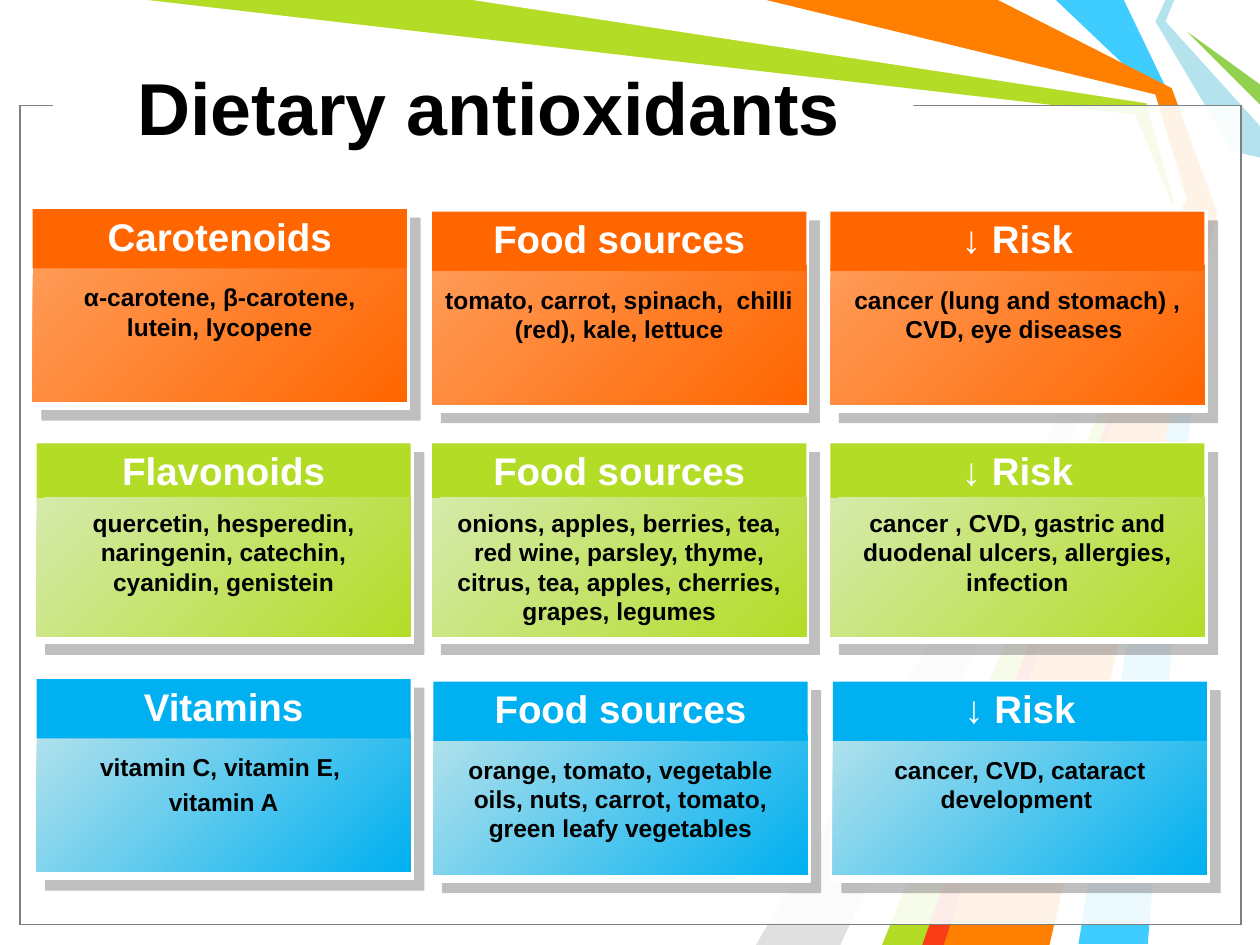
from dataclasses import dataclass

from lxml import etree
from pptx import Presentation
from pptx.dml.color import RGBColor
from pptx.enum.shapes import MSO_SHAPE
from pptx.enum.text import MSO_ANCHOR, PP_ALIGN
from pptx.oxml.ns import qn
from pptx.shapes.autoshape import Shape
from pptx.slide import Slide
from pptx.util import Inches, Pt

RECTANGLE = MSO_SHAPE.RECTANGLE
MIDDLE, TOP = MSO_ANCHOR.MIDDLE, MSO_ANCHOR.TOP
CENTER, LEFT = PP_ALIGN.CENTER, PP_ALIGN.LEFT
FONT = "Arial"
CARD_WIDTH, CARD_HEIGHT = 3, 1.6
PANEL_WIDTH, HEADER_HEIGHT, BODY_HEIGHT = 2.97, 0.47, 1.1

COLORS = {
    "white": "FFFFFF", "black": "000000", "gray": "808080", "silver": "E0E0E0",
    "sky": "3FCDFF", "lime": "B3DC27", "pale_lime": "D5EAAB",
    "ice": "B4E3EE", "leaf": "92D050", "amber": "FF7F00", "red": "F93D17",
    "orange": "FF6600", "pale_orange": "FF9B57",
    "blue": "00B0F0", "pale_blue": "B1E1EC",
}


@dataclass
class Ray:
    color: str
    points: list[tuple[float, float]]


@dataclass
class Card:
    left: float
    top: float
    heading: str
    details: str


@dataclass
class CardRow:
    color: str
    pale: str
    details_offset: float
    header_in_front: bool
    cards: list[Card]


RAYS = [
    Ray("sky", [(8.92, 0), (9.29, 0.77), (9.58, 1.67), (9.11, 7.49), (8.56, 7.49),
                (9.5, 1.67), (9.17, 0.75), (8.38, 0)]),
    Ray("lime", [(1.17, 0), (3.83, 0), (9.14, 0.78), (9.42, 1.69), (7.42, 7.5),
                 (6.92, 7.5), (9.35, 1.73), (9.01, 0.91)]),
    Ray("silver", [(6.67, 7.5), (9.27, 1.81), (6, 7.5)]),
    Ray("white", [(3.75, 0), (9.1, 0.82), (9.32, 1.62), (6.75, 7.5), (7, 7.5),
                  (9.41, 1.58), (9.17, 0.75), (6, 0)]),
    Ray("ice", [(9.25, 0), (9.17, 0.17), (9.78, 1.2), (10, 1.25), (10, 1),
                (9.25, 0.17), (9.32, 0)]),
    Ray("leaf", [(10, 0.83), (9.42, 0.25), (10, 0.67)]),
    Ray("amber", [(6.08, 0), (7.92, 0), (9.3, 0.7), (9.66, 1.69), (8.33, 7.5),
                  (7.33, 7.5), (9.42, 1.58), (9.17, 0.75)]),
    Ray("red", [(7.32, 7.5), (9.32, 1.83), (7.49, 7.5)]),
]

CARD_ROWS = [
    CardRow("orange", "pale_orange", 0.54, True, [
        Card(0.25, 1.65, "Carotenoids", "α-carotene, β-carotene, lutein, lycopene"),
        Card(3.42, 1.67, "Food sources",
             "tomato, carrot, spinach,  chilli (red), kale, lettuce"),
        Card(6.58, 1.67, "↓ Risk", "cancer (lung and stomach) , CVD, eye diseases "),
    ]),
    CardRow("lime", "pale_lime", 0.47, False, [
        Card(0.28, 3.51, "Flavonoids",
             "quercetin, hesperedin, naringenin, catechin, cyanidin, genistein"),
        Card(3.42, 3.51, "Food sources",
             "onions, apples, berries, tea, red wine, parsley, thyme, "
             "citrus, tea, apples, cherries, grapes, legumes"),
        Card(6.58, 3.51, "↓ Risk",
             "cancer , CVD, gastric and duodenal ulcers, allergies, infection"),
    ]),
    CardRow("blue", "pale_blue", 0.54, True, [
        Card(0.28, 5.38, "Vitamins", "vitamin C, vitamin E, \nvitamin A"),
        Card(3.43, 5.4, "Food sources",
             "orange, tomato, vegetable oils, nuts, carrot, tomato, "
             "green leafy vegetables"),
        Card(6.6, 5.4, "↓ Risk", "cancer, CVD, cataract development "),
    ]),
]


def rgb(color: str) -> RGBColor:
    return RGBColor.from_string(COLORS[color])


def add_box(slide: Slide, left: float, top: float, width: float, height: float,
            color: str, line: str | None = None) -> Shape:
    box = slide.shapes.add_shape(
        RECTANGLE, Inches(left), Inches(top), Inches(width), Inches(height))
    box.shadow.inherit = False
    box.fill.solid()
    box.fill.fore_color.rgb = rgb(color)
    if line:
        box.line.color.rgb = rgb(line)
        box.line.width = Pt(0.75)
    else:
        box.line.fill.background()
    return box


def set_alpha(color_element: etree._Element, percent: int) -> None:
    etree.SubElement(color_element, qn("a:alpha"), val=str(percent * 1000))


def add_drop_shadow(box: Shape) -> None:
    effects = box._element.spPr.find(qn("a:effectLst"))
    shadow = etree.SubElement(
        effects, qn("a:outerShdw"), blurRad="0", dist=str(Pt(8.5)),
        dir=str(45 * 60000), algn="ctr", rotWithShape="0")
    set_alpha(etree.SubElement(shadow, qn("a:srgbClr"), val=COLORS["gray"]), 50)


def write_text(shape: Shape, text: str, size: float, color: str,
               alignment: PP_ALIGN, anchor: MSO_ANCHOR) -> None:
    frame = shape.text_frame
    frame.text = text
    frame.word_wrap = True
    frame.vertical_anchor = anchor
    for paragraph in frame.paragraphs:
        paragraph.alignment = alignment
        paragraph.space_before = Pt(0)
        paragraph.space_after = Pt(3)
        for run in paragraph.runs:
            run.font.name = FONT
            run.font.size = Pt(size)
            run.font.bold = True
            run.font.color.rgb = rgb(color)


def add_label(slide: Slide, left: float, top: float, height: float,
              text: str, size: float, color: str) -> None:
    label = slide.shapes.add_textbox(
        Inches(left), Inches(top), Inches(PANEL_WIDTH), Inches(height))
    write_text(label, text, size, color, CENTER, TOP)


def draw_ray(slide: Slide, ray: Ray) -> None:
    start, *rest = [(Inches(x), Inches(y)) for x, y in ray.points]
    builder = slide.shapes.build_freeform(*start)
    builder.add_line_segments(rest, close=True)
    shape = builder.convert_to_shape()
    shape.shadow.inherit = False
    shape.fill.solid()
    shape.fill.fore_color.rgb = rgb(ray.color)
    shape.line.fill.background()


def draw_frame(slide: Slide) -> None:
    for line in ("black", "gray"):
        veil = add_box(slide, 0.16, 0.84, 9.69, 6.5, "white", line)
        set_alpha(veil._element.spPr.find(qn("a:solidFill"))[0], 69)
    add_box(slide, 0.42, 0.74, 6.83, 0.17, "white")


def draw_title(slide: Slide) -> None:
    title = slide.shapes.title
    title.left, title.top = Inches(0.99), Inches(0.22)
    title.width, title.height = Inches(6.89), Inches(1.25)
    write_text(title, "Dietary antioxidants", 42, "black", LEFT, MIDDLE)
    slide.shapes._spTree.append(title._element)


def draw_card(slide: Slide, card: Card, row: CardRow) -> None:
    add_drop_shadow(add_box(slide, card.left, card.top, CARD_WIDTH, CARD_HEIGHT,
                            "white", "white"))
    left = card.left + 0.01
    header = add_box(slide, left, card.top + 0.01, PANEL_WIDTH, HEADER_HEIGHT, row.color)
    body = add_box(slide, left, card.top + 0.44, PANEL_WIDTH, BODY_HEIGHT, row.color)
    body.fill.gradient()
    body.fill.gradient_angle = 315
    for stop, position, color in zip(body.fill.gradient_stops, (0, 1), (row.pale, row.color)):
        stop.position = position
        stop.color.rgb = rgb(color)
    if row.header_in_front:
        body._element.addnext(header._element)
    add_label(slide, left, card.top + row.details_offset, 0.81, card.details, 14, "black")
    add_label(slide, left, card.top - 0.01, HEADER_HEIGHT, card.heading, 22, "white")


def main() -> None:
    deck = Presentation()
    deck.slide_width, deck.slide_height = Inches(10), Inches(7.5)
    slide = deck.slides.add_slide(deck.slide_layouts[5])
    for ray in RAYS:
        draw_ray(slide, ray)
    draw_frame(slide)
    draw_title(slide)
    for row in CARD_ROWS:
        for card in row.cards:
            draw_card(slide, card, row)
    deck.save("out.pptx")


if __name__ == "__main__":
    main()
